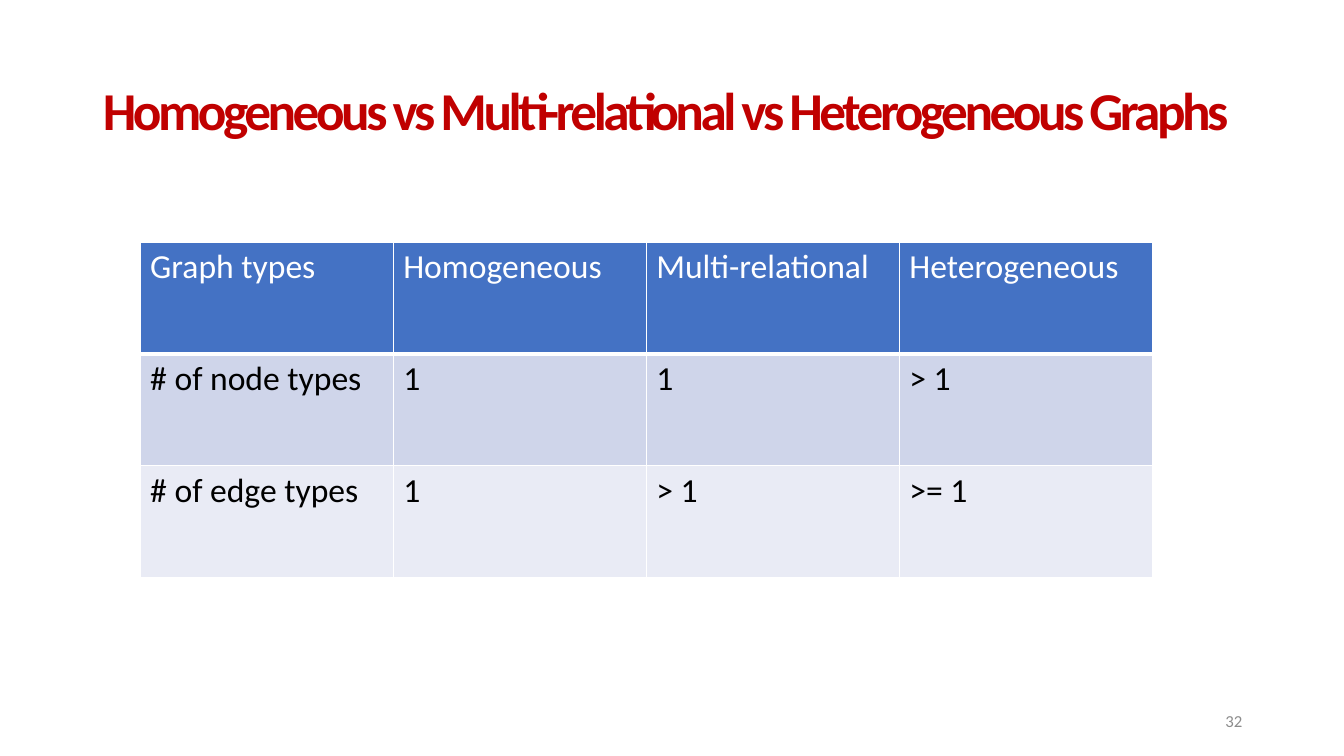
from lxml import etree
from pptx import Presentation
from pptx.dml.color import RGBColor
from pptx.enum.text import MSO_ANCHOR, PP_ALIGN
from pptx.oxml.ns import qn
from pptx.util import Inches, Pt

MIDDLE = MSO_ANCHOR.MIDDLE
LEFT, RIGHT = PP_ALIGN.LEFT, PP_ALIGN.RIGHT

TITLE = "Homogeneous vs Multi-relational vs Heterogeneous Graphs"
PAGE_NUMBER = "32"
GRAPH_TYPES = [
    ("Graph types", "Homogeneous", "Multi-relational", "Heterogeneous"),
    ("# of node types", "1", "1", "> 1"),
    ("# of edge types", "1", "> 1", ">= 1"),
]
ROW_STYLES = [
    ("4472C4", "FFFFFF", 3),
    ("CFD5EA", "000000", 1),
    ("E9EBF5", "000000", 1),
]
FONT = "Calibri"
COLUMN_WIDTH, ROW_HEIGHT = 2.51, 1.11


def color(value):
    return RGBColor.from_string(value)


def format_text(paragraph, size, hex_color, bold=False, align=LEFT):
    paragraph.alignment = align
    for run in paragraph.runs:
        run.font.name = FONT
        run.font.size = Pt(size)
        run.font.bold = bold
        run.font.color.rgb = color(hex_color)


def add_borders(cell, bottom_width):
    properties = cell._tc.get_or_add_tcPr()
    widths = {"a:lnL": 1, "a:lnR": 1, "a:lnT": 1, "a:lnB": bottom_width}
    for position, (side, width) in enumerate(widths.items()):
        border = etree.Element(qn(side), w=str(Pt(width)))
        fill = etree.SubElement(border, qn("a:solidFill"))
        etree.SubElement(fill, qn("a:srgbClr"), val="FFFFFF")
        properties.insert(position, border)


def add_title(slide):
    title = slide.shapes.title
    title.left, title.top = Inches(0.92), Inches(0.4)
    title.width, title.height = Inches(11.5), Inches(1.45)
    title.text_frame.text = TITLE
    title.text_frame.vertical_anchor = MIDDLE
    heading = title.text_frame.paragraphs[0]
    heading.line_spacing = 0.9
    format_text(heading, 38, "C00000", bold=True)
    heading.runs[0].font._element.set("spc", "-250")


def add_graph_table(slide):
    rows, columns = len(GRAPH_TYPES), len(GRAPH_TYPES[0])
    table = slide.shapes.add_table(
        rows, columns, Inches(1.39), Inches(2.4),
        Inches(COLUMN_WIDTH * columns), Inches(ROW_HEIGHT * rows),
    ).table
    for column in table.columns:
        column.width = Inches(COLUMN_WIDTH)
    for row, texts, (fill, text_color, bottom) in zip(table.rows, GRAPH_TYPES, ROW_STYLES):
        row.height = Inches(ROW_HEIGHT)
        for cell, text in zip(row.cells, texts):
            cell.text_frame.text = text
            format_text(cell.text_frame.paragraphs[0], 24, text_color)
            cell.fill.solid()
            cell.fill.fore_color.rgb = color(fill)
            add_borders(cell, bottom)


def add_page_number(slide):
    number = slide.shapes.add_textbox(Inches(9.42), Inches(6.95), Inches(3), Inches(0.4))
    frame = number.text_frame
    frame.word_wrap = True
    frame.vertical_anchor = MIDDLE
    frame.text = PAGE_NUMBER
    format_text(frame.paragraphs[0], 12, "8C8C8C", align=RIGHT)


def main():
    deck = Presentation()
    deck.slide_width, deck.slide_height = Inches(13.33), Inches(7.5)
    slide = deck.slides.add_slide(deck.slide_layouts[5])
    add_title(slide)
    add_graph_table(slide)
    add_page_number(slide)
    deck.save("out.pptx")


if __name__ == "__main__":
    main()
